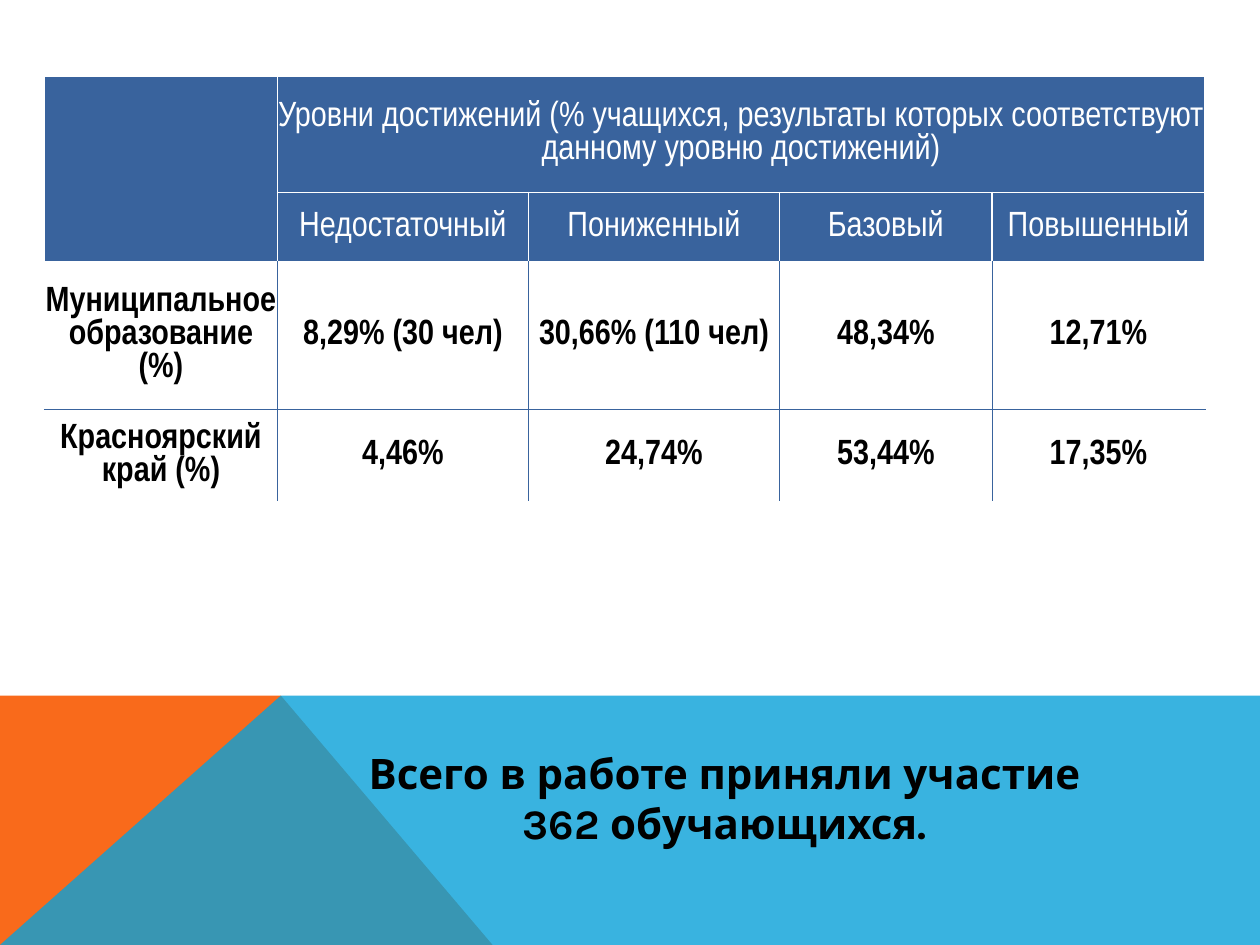
import pptx
import pptx.util
import pptx.dml.color
import pptx.enum.text
import pptx.oxml
import pptx.oxml.ns
from lxml import etree

Pt = pptx.util.Pt
COLORS = {"white": "FFFFFF", "black": "000000", "blue": "39639D",
          "orange": "F96A1B", "sky": "08A1D9"}
SLIDE_W, SLIDE_H = 720, 540
BAND_TOP, PEAK_X, FOOT_X = 397.5, 160.5, 281.5

ROWS = [
    ["", "Уровни достижений (% учащихся, результаты которых соответствуют "
         "данному уровню достижений)", "", "", ""],
    ["", "Недостаточный", "Пониженный", "Базовый", "Повышенный"],
    ["Муниципальное образование (%)", "8,29% (30 чел)", "30,66% (110 чел)",
     "48,34%", "12,71%"],
    ["Красноярский край (%)", "4,46%", "24,74%", "53,44%", "17,35%"],
]
HEADER_ROWS = 2
COL_WIDTHS = [133, 143.5, 143.5, 121.5, 121.5]
ROW_HEIGHTS = [66.5, 39.5, 84.5, 53]
TABLE_LEFT, TABLE_TOP = 25.5, 43.5
MERGES = [((0, 0), (1, 0)), ((0, 1), (0, 4))]
SUMMARY = ["Всего в работе приняли участие", "362 обучающихся."]
SUMMARY_BOX = (133.5, 423.5, 561, 65.5)

HEADER_FONT = {"name": "Arial Narrow", "size": Pt(20), "bold": False}
BODY_FONT = {**HEADER_FONT, "bold": True}
SUMMARY_FONT = {"name": "Karla", "size": Pt(24), "bold": True}


def rgb(name):
    return pptx.dml.color.RGBColor.from_string(COLORS[name])


def write(p, text, font, color):
    p.alignment = pptx.enum.text.PP_ALIGN.CENTER
    r = p.add_run()
    r.text = text
    for key, value in font.items():
        setattr(r.font, key, value)
    r.font.color.rgb = rgb(color)


def add_band(slide, points, color, alpha=None):
    builder = slide.shapes.build_freeform(Pt(points[0][0]), Pt(points[0][1]))
    builder.add_line_segments([(Pt(x), Pt(y)) for x, y in points[1:]], close=True)
    s = builder.convert_to_shape()
    s.shadow.inherit = False
    s.fill.solid()
    s.fill.fore_color.rgb = rgb(color)
    s.line.fill.background()
    if alpha is not None:
        clr = s.fill._xPr.find(".//" + pptx.oxml.ns.qn("a:srgbClr"))
        etree.SubElement(clr, pptx.oxml.ns.qn("a:alpha"), val=str(alpha * 1000))


def set_borders(cell, borders):
    """Put border lines, given as side: (color, points), ahead of the cell fill."""
    tc_pr = cell._tc.get_or_add_tcPr()
    ns = pptx.oxml.ns.nsdecls("a")
    for i, side in enumerate(s for s in "LRTB" if s in borders):
        color, width = borders[side]
        tc_pr.insert(i, pptx.oxml.parse_xml(
            f'<a:ln{side} {ns} w="{int(Pt(width))}"><a:solidFill>'
            f'<a:srgbClr val="{COLORS[color]}"/></a:solidFill></a:ln{side}>'))


def merge_at(row, col):
    for (top, left), (bottom, right) in MERGES:
        if top <= row <= bottom and left <= col <= right:
            return top, left
    return row, col


def borders_of(row, col):
    """Inner lines only: white around headers, thin blue between body cells."""
    neighbours = {"L": (row, col - 1), "R": (row, col + 1),
                  "T": (row - 1, col), "B": (row + 1, col)}
    borders = {}
    for side, (r, c) in neighbours.items():
        inside = 0 <= r < len(ROWS) and 0 <= c < len(COL_WIDTHS)
        if inside and merge_at(r, c) != merge_at(row, col):
            header = min(r, row) < HEADER_ROWS
            borders[side] = ("white", 1) if header else ("blue", 0.5)
    return borders


def add_levels_table(slide):
    table = slide.shapes.add_table(
        len(ROWS), len(COL_WIDTHS), Pt(TABLE_LEFT), Pt(TABLE_TOP),
        Pt(sum(COL_WIDTHS)), Pt(sum(ROW_HEIGHTS))).table
    table.first_row = table.horz_banding = False
    for column, width in zip(table.columns, COL_WIDTHS):
        column.width = Pt(width)
    for row, height in zip(table.rows, ROW_HEIGHTS):
        row.height = Pt(height)
    for start, end in MERGES:
        table.cell(*start).merge(table.cell(*end))
    for i, texts in enumerate(ROWS):
        header = i < HEADER_ROWS
        for j, text in enumerate(texts):
            cell = table.cell(i, j)
            cell.fill.solid()
            cell.fill.fore_color.rgb = rgb("blue" if header else "white")
            for side in ("left", "right", "top", "bottom"):
                setattr(cell, "margin_" + side, 0)
            cell.vertical_anchor = pptx.enum.text.MSO_ANCHOR.MIDDLE
            set_borders(cell, borders_of(i, j))
            if text:
                write(cell.text_frame.paragraphs[0], text,
                      HEADER_FONT if header else BODY_FONT,
                      "white" if header else "black")


def add_summary(slide):
    tf = slide.shapes.add_textbox(*map(Pt, SUMMARY_BOX)).text_frame
    tf.word_wrap = True
    for i, text in enumerate(SUMMARY):
        p = tf.add_paragraph() if i else tf.paragraphs[0]
        write(p, text, SUMMARY_FONT, "black")


def main():
    prs = pptx.Presentation()
    prs.slide_width, prs.slide_height = Pt(SLIDE_W), Pt(SLIDE_H)
    slide = prs.slides.add_slide(prs.slide_layouts[6])
    peak = (PEAK_X, BAND_TOP)
    add_band(slide, [(0, SLIDE_H), (0, BAND_TOP), peak, (FOOT_X, SLIDE_H)], "orange")
    add_band(slide, [(0, SLIDE_H), peak, (SLIDE_W, BAND_TOP), (SLIDE_W, SLIDE_H)],
             "sky", alpha=80)
    add_levels_table(slide)
    add_summary(slide)
    prs.save("out.pptx")


if __name__ == "__main__":
    main()
